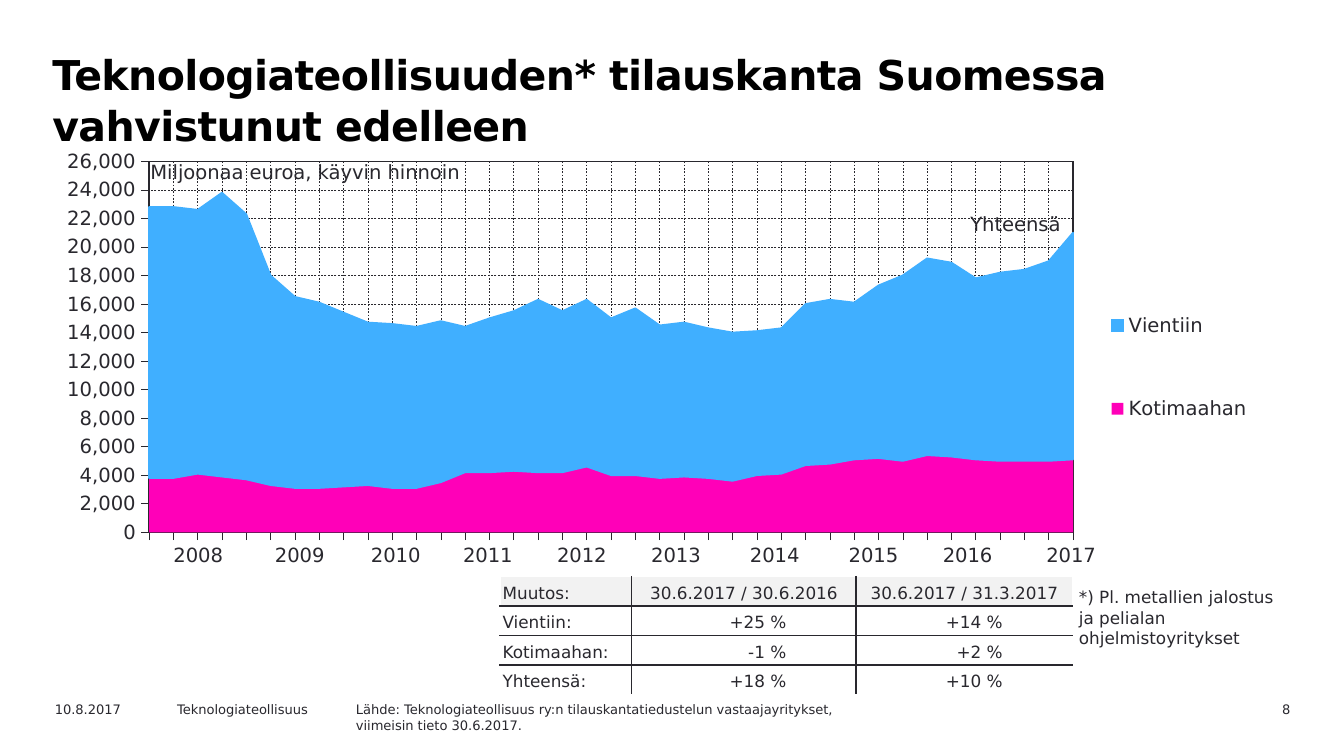
from lxml.etree import SubElement
from pptx import Presentation
from pptx.chart.data import CategoryChartData
from pptx.dml.color import RGBColor
from pptx.enum.chart import XL_CHART_TYPE, XL_LEGEND_POSITION, XL_TICK_LABEL_POSITION, XL_TICK_MARK
from pptx.enum.dml import MSO_LINE
from pptx.enum.text import MSO_ANCHOR, MSO_AUTO_SIZE, PP_ALIGN
from pptx.oxml import parse_xml
from pptx.oxml.ns import nsdecls, qn
from pptx.util import Pt

SCALE = 9144  # EMU per px, 100 px to the inch
FONT = "DejaVu Sans"
COLORS = {"title": "000000", "ink": "29282E", "white": "FFFFFF", "header": "F2F2F2",
          "domestic": "FF00B8", "export": "40AFFF"}

DOMESTIC = [3800, 3800, 4100, 3900, 3700, 3300, 3100, 3100, 3200, 3300, 3100, 3100, 3500,
            4200, 4200, 4300, 4200, 4200, 4600, 4000, 4000, 3800, 3900, 3800, 3600, 4000,
            4100, 4700, 4800, 5100, 5200, 5000, 5400, 5300, 5100, 5000, 5000, 5000, 5100]
EXPORT = [19000, 19000, 18500, 19900, 18600, 14700, 13400, 13000, 12200, 11400, 11500, 11300,
          11300, 10200, 10800, 11200, 12100, 11300, 11700, 11000, 11700, 10700, 10800, 10500,
          10400, 10100, 10200, 11300, 11500, 11000, 12100, 13000, 13800, 13600, 12700, 13200,
          13400, 14000, 15900]
CHANGES = [("Muutos:", "30.6.2017 / 30.6.2016", "30.6.2017 / 31.3.2017"),
           ("Vientiin:", "+25 %", "+14 %"),
           ("Kotimaahan:", "-1 %", "+2 %"),
           ("Yhteensä:", "+18 %", "+10 %")]


def px(value):
    return int(value * SCALE)


def rgb(name):
    return RGBColor.from_string(COLORS[name])


def style_font(font, size, color="ink", bold=False):
    font.name, font.size, font.bold = FONT, Pt(size), bold
    font.color.rgb = rgb(color)


def write(frame, text, size, color="ink", bold=False, align=PP_ALIGN.LEFT, leading=None, spacing=None):
    for i, line in enumerate(text.split("\n")):
        paragraph = frame.add_paragraph() if i else frame.paragraphs[0]
        paragraph.alignment = align
        if leading:
            paragraph.line_spacing = Pt(leading)
            paragraph.space_before = Pt(0)
        run = paragraph.add_run()
        run.text = line
        style_font(run.font, size, color, bold)
        if spacing:
            run.font._element.set("spc", str(spacing))


def set_margins(target, left, top, right, bottom):
    target.margin_left, target.margin_top = px(left), px(top)
    target.margin_right, target.margin_bottom = px(right), px(bottom)


def add_label(slide, box, text, size, margins=(10, 5, 10, 5), wrap=True, **text_format):
    frame = slide.shapes.add_textbox(*map(px, box)).text_frame
    frame.word_wrap = wrap
    set_margins(frame, *margins)
    write(frame, text, size, **text_format)


def add_title(slide, box, text):
    title = slide.shapes.title
    title.left, title.top, title.width, title.height = map(px, box)
    frame = title.text_frame
    frame.auto_size, frame.word_wrap = MSO_AUTO_SIZE.NONE, True
    frame.vertical_anchor = MSO_ANCHOR.TOP
    set_margins(frame, 11, 5, 10, 0)
    write(frame, text, 22, color="title", bold=True, leading=27, spacing=-30)


def set_layout(parent, index, x, y, w, h, inner=False):
    for old in parent.findall(qn("c:layout")):
        parent.remove(old)
    target = '<c:layoutTarget val="inner"/>' if inner else ""
    sizes = "".join(f'<c:{tag} val="{value}"/>' for tag, value in zip("xywh", (x, y, w, h)))
    parent.insert(index, parse_xml(
        f'<c:layout {nsdecls("c")}><c:manualLayout>{target}<c:xMode val="edge"/>'
        f'<c:yMode val="edge"/>{sizes}</c:manualLayout></c:layout>'))


def style_axis(axis):
    axis.major_tick_mark, axis.minor_tick_mark = XL_TICK_MARK.OUTSIDE, XL_TICK_MARK.NONE
    axis.has_major_gridlines = True
    grid = axis.major_gridlines.format.line
    for line in (axis.format.line, grid):
        line.color.rgb, line.width = rgb("ink"), Pt(0.25)
    grid.dash_style = MSO_LINE.DASH
    style_font(axis.tick_labels.font, 10.5)


def add_order_chart(slide, box):
    data = CategoryChartData()
    data.categories = [str(i + 1) for i in range(len(EXPORT))]
    data.add_series("Kotimaahan", DOMESTIC)
    data.add_series("Vientiin", EXPORT)
    chart = slide.shapes.add_chart(XL_CHART_TYPE.AREA_STACKED, *map(px, box), data).chart
    chart.has_title = False
    style_font(chart.font, 10.5)

    for series, color in zip(chart.plots[0].series, ("domestic", "export")):
        series.format.fill.solid()
        series.format.fill.fore_color.rgb = rgb(color)
    series.format.line.color.rgb = rgb("export")
    series.format.line.width = Pt(0.88)

    # Axes
    style_axis(chart.category_axis)
    chart.category_axis.tick_label_position = XL_TICK_LABEL_POSITION.NONE
    values = chart.value_axis
    style_axis(values)
    values.minimum_scale, values.maximum_scale, values.major_unit = 0, 26000, 2000
    values.tick_labels.number_format = "#,##0"
    values.tick_labels.number_format_is_linked = False
    values._element.find(qn("c:crossBetween")).set("val", "midCat")

    # Plot frame and legend
    plot_area = chart._chartSpace.chart.plotArea
    set_layout(plot_area, 0, 0.075, 0.029, 0.749, 0.885, inner=True)
    plot_area.append(parse_xml(
        f'<c:spPr {nsdecls("c", "a")}><a:noFill/><a:ln w="11176"><a:solidFill>'
        f'<a:srgbClr val="{COLORS["ink"]}"/></a:solidFill></a:ln></c:spPr>'))
    chart.has_legend = True
    chart.legend.position = XL_LEGEND_POSITION.RIGHT
    chart.legend.include_in_layout = False
    style_font(chart.legend.font, 10.5)
    set_layout(chart.legend._element, 1, 0.83, 0.25, 0.16, 0.54)


def set_borders(cell, colors):
    properties = cell._tc.get_or_add_tcPr()
    for i, (side, color) in enumerate(zip("LRTB", colors)):
        line = properties.makeelement(qn(f"a:ln{side}"), {"w": "12700"})
        properties.insert(i, line)
        if color:
            SubElement(SubElement(line, qn("a:solidFill")), qn("a:srgbClr"), val=COLORS[color])
        else:
            SubElement(line, qn("a:noFill"))


def add_plain_table(slide, box, widths, rows):
    table = slide.shapes.add_table(rows, len(widths), *map(px, box)).table
    table.first_row = table.horz_banding = False
    for column, width in zip(table.columns, widths):
        column.width = px(width)
    for row in table.rows:
        row.height = px(box[3] / rows)
    return table


def add_year_row(slide, box):
    table = add_plain_table(slide, box, (75, 76, 67, 70, 70, 70, 77, 70, 70, 84), 1)
    for i, cell in enumerate(table.iter_cells()):
        cell.fill.background()
        set_margins(cell, 10, 5, 10, 5)
        write(cell.text_frame, str(2008 + i), 10.5, align=PP_ALIGN.CENTER)
        set_borders(cell, [None] * 4)


def add_change_table(slide, box):
    table = add_plain_table(slide, box, (98, 167, 161), len(CHANGES))
    last_row, last_column = len(CHANGES) - 1, len(CHANGES[0]) - 1
    for r, row in enumerate(CHANGES):
        for c, text in enumerate(row):
            cell = table.cell(r, c)
            number = r > 0 and c > 0
            align = PP_ALIGN.LEFT if c == 0 else PP_ALIGN.RIGHT if number else PP_ALIGN.CENTER
            cell.fill.solid()
            cell.fill.fore_color.rgb = rgb("white" if r else "header")
            cell.vertical_anchor = MSO_ANCHOR.BOTTOM
            set_margins(cell, 2, 2, 52 if number else 2, 2)
            write(cell.text_frame, text, 9, align=align)
            outer = (c == 0, c == last_column, r == 0, r == last_row)
            set_borders(cell, ["white" if edge else "ink" for edge in outer])


def add_footer(slide, left, top):
    add_label(slide, (left + 845, top, 94, 18), "8", 7, align=PP_ALIGN.RIGHT)
    add_label(slide, (left, top, 100, 18), "10.8.2017", 7)
    add_label(slide, (left + 91, top, 142, 18), "Teknologiateollisuus", 7)
    add_label(slide, (left + 224, top, 500, 26),
              "Lähde: Teknologiateollisuus ry:n tilauskantatiedustelun vastaajayritykset,\n"
              "viimeisin tieto 30.6.2017.", 7)


def main():
    deck = Presentation()
    deck.slide_width = px(1000)
    deck.slide_height = deck.slide_width * 9 // 16
    slide = deck.slides.add_slide(deck.slide_layouts[5])
    add_title(slide, (28, 31, 874, 71),
              "Teknologiateollisuuden* tilauskanta Suomessa vahvistunut edelleen")
    add_footer(slide, 31, 517)
    add_order_chart(slide, (42, 111, 918, 312))
    add_year_row(slide, (110, 400, 729, 25))
    add_label(slide, (103, 114, 260, 27), "Miljoonaa euroa, käyvin hinnoin", 10.5,
              margins=(9, 5, 9, 5), wrap=False)
    add_change_table(slide, (372, 429, 426, 88))
    add_label(slide, (793, 432, 166, 56),
              "*) Pl. metallien jalostus ja pelialan ohjelmistoyritykset", 9)
    add_label(slide, (713, 154, 106, 27), "Yhteensä", 10.5, margins=(9, 4, 9, 4))
    deck.save("out.pptx")


if __name__ == "__main__":
    main()
